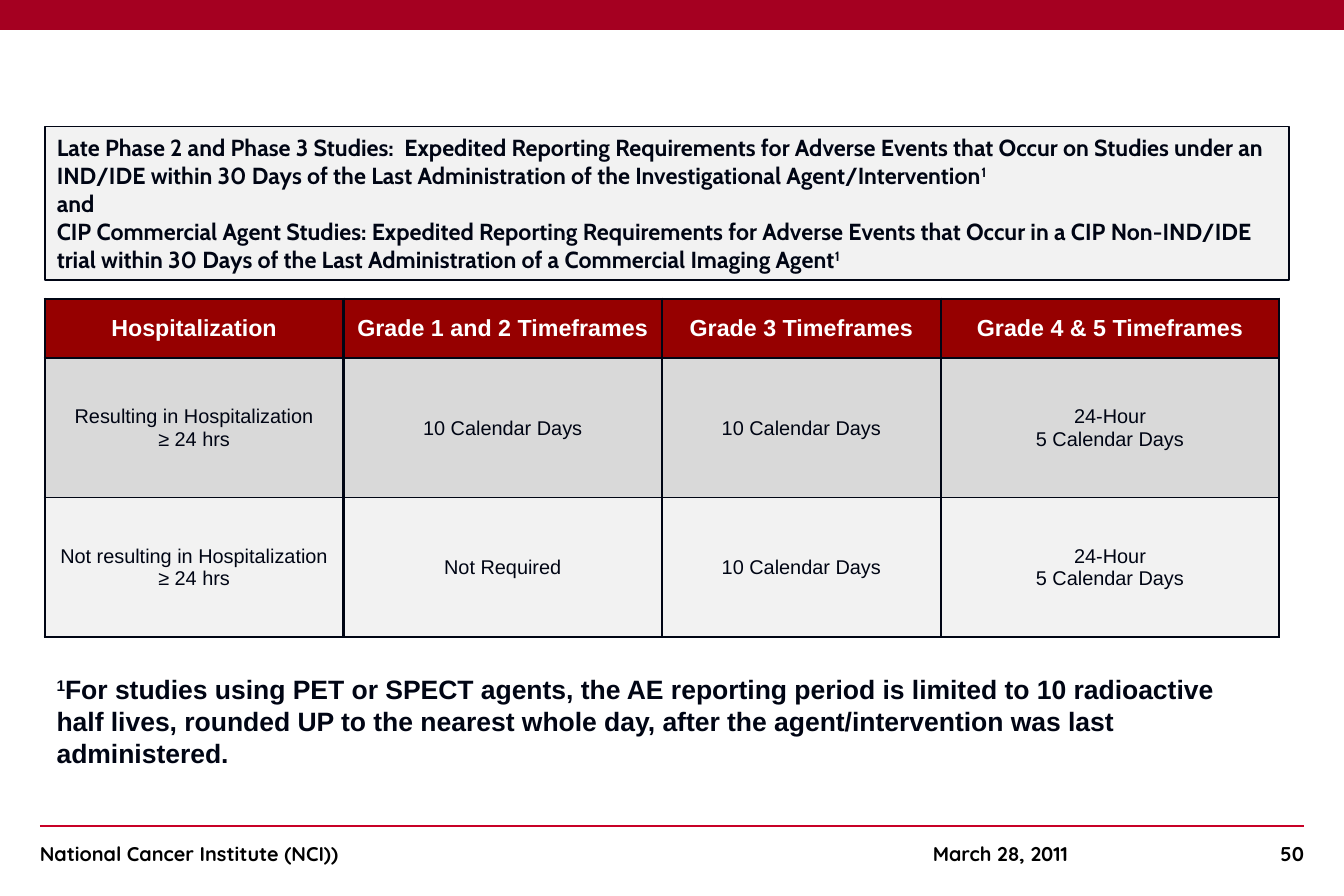
from dataclasses import dataclass

import pptx
import pptx.dml.color
import pptx.enum.shapes
import pptx.enum.text
import pptx.oxml
import pptx.oxml.ns
import pptx.util

ALIGN = pptx.enum.text.PP_ALIGN
ANCHOR = pptx.enum.text.MSO_ANCHOR
WIDTH, HEIGHT = 11.25, 7.5
COLS, ROWS = 135, 90


@dataclass(frozen=True)
class Theme:
    ink: str = "000514"
    black: str = "000000"
    white: str = "FFFFFF"
    band: str = "A50021"
    rule: str = "C80026"
    head: str = "960000"
    dark: str = "D9D9D9"
    light: str = "F2F2F2"
    body: str = "Arial"
    title: str = "Cabin"
    foot: str = "Quicksand"
    small: int = 12
    mid: int = 14
    large: int = 16
    thin: float = 1
    thick: float = 1.5


@dataclass(frozen=True)
class Box:
    """A place on the slide, in grid columns and rows."""
    left: float
    top: float
    wide: float
    high: float

    def place(self) -> tuple:
        return across(self.left), down(self.top), across(self.wide), down(self.high)


@dataclass(frozen=True)
class Label:
    text: str
    box: Box
    size: int
    font: str
    color: str
    align: ALIGN = ALIGN.LEFT
    pad: float = 0.1


@dataclass(frozen=True)
class Band:
    """One table row with its look."""
    cells: tuple
    high: float
    fill: str
    color: str
    size: int
    bold: bool
    above: float
    below: float


THEME = Theme()
SPANS = (30, 32, 28, 34)
BANDS = (
    Band(("Hospitalization", "Grade 1 and 2 Timeframes", "Grade 3 Timeframes",
          "Grade 4 & 5 Timeframes"),
         6, THEME.head, THEME.white, THEME.mid, True, THEME.thick, THEME.thick),
    Band(("Resulting in Hospitalization\n≥ 24 hrs", "10 Calendar Days",
          "10 Calendar Days", "24-Hour\n5 Calendar Days"),
         14, THEME.dark, THEME.ink, THEME.small, False, THEME.thick, THEME.thin),
    Band(("Not resulting in Hospitalization\n≥ 24 hrs", "Not Required",
          "10 Calendar Days", "24-Hour\n5 Calendar Days"),
         14, THEME.light, THEME.ink, THEME.small, False, THEME.thin, THEME.thick),
)
# Text between a pair of carets is raised.
TITLE = (
    "Late Phase 2 and Phase 3 Studies:  Expedited Reporting Requirements for Adverse "
    "Events that Occur on Studies under an IND/IDE within 30 Days of the Last "
    "Administration of the Investigational Agent/Intervention^1^\n"
    "and\n"
    "CIP Commercial Agent Studies: Expedited Reporting Requirements for Adverse Events "
    "that Occur in a CIP Non-IND/IDE trial within 30 Days of the Last Administration "
    "of a Commercial Imaging Agent^1^"
)
NOTE = (
    "^1^For studies using PET or SPECT agents, the AE reporting period is limited to "
    "10 radioactive half lives, rounded UP to the nearest whole day, after the "
    "agent/intervention was last administered."
)
LABELS = (
    Label(NOTE, Box(4.5, 67, 123, 11), THEME.large, THEME.body, THEME.ink),
    Label("National Cancer Institute (NCI))", Box(4, 84, 60, 3.6),
          THEME.small, THEME.foot, THEME.black, pad=0),
    Label("March 28, 2011", Box(93.7, 84, 16, 3.6),
          THEME.small, THEME.foot, THEME.black, pad=0),
    Label("50", Box(111, 84, 20, 3.6),
          THEME.small, THEME.foot, THEME.black, ALIGN.RIGHT, 0),
)


def across(cols: float) -> int:
    return pptx.util.Inches(WIDTH * cols / COLS)


def down(rows: float) -> int:
    return pptx.util.Inches(HEIGHT * rows / ROWS)


def rgb(code: str) -> pptx.dml.color.RGBColor:
    return pptx.dml.color.RGBColor.from_string(code)


def paint(fill, code: str) -> None:
    fill.solid()
    fill.fore_color.rgb = rgb(code)


def write(frame, text: str, *, size: int, font: str, color: str,
          bold: bool = True, align: ALIGN = ALIGN.LEFT) -> None:
    frame.word_wrap = True
    for row, line in enumerate(text.split("\n")):
        para = frame.add_paragraph() if row else frame.paragraphs[0]
        para.alignment = align
        for part, piece in enumerate(line.split("^")):
            if not piece:
                continue
            run = para.add_run()
            run.text = piece
            run.font.size = pptx.util.Pt(size)
            run.font.name = font
            run.font.bold = bold
            run.font.color.rgb = rgb(color)
            if part % 2:
                run.font._element.set("baseline", "30000")


def draw_band(slide) -> None:
    bar = slide.shapes.add_shape(pptx.enum.shapes.MSO_SHAPE.RECTANGLE,
                                 *Box(0, 0, COLS, 3).place())
    bar.shadow.inherit = False
    paint(bar.fill, THEME.band)
    bar.line.fill.background()


def draw_title(slide) -> None:
    title = slide.shapes.title
    title.left, title.top, title.width, title.height = Box(4.5, 12.7, 125, 15.4).place()
    paint(title.fill, THEME.light)
    paint(title.line.fill, THEME.ink)
    title.line.width = pptx.util.Pt(THEME.thin)
    frame = title.text_frame
    frame.auto_size = pptx.enum.text.MSO_AUTO_SIZE.NONE
    frame.vertical_anchor = ANCHOR.MIDDLE
    write(frame, TITLE, size=THEME.mid, font=THEME.title, color=THEME.ink)


def edge(cell, side: str, width: float) -> None:
    cell._tc.get_or_add_tcPr().append(pptx.oxml.parse_xml(
        f'<a:{side} {pptx.oxml.ns.nsdecls("a")} w="{pptx.util.Pt(width)}">'
        f'<a:solidFill><a:srgbClr val="{THEME.ink}"/></a:solidFill></a:{side}>'))


def draw_table(slide) -> None:
    box = Box(4.5, 30, sum(SPANS), sum(band.high for band in BANDS))
    table = slide.shapes.add_table(len(BANDS), len(SPANS), *box.place()).table
    table.first_row = table.horz_banding = False
    for col, span in zip(table.columns, SPANS):
        col.width = across(span)
    for row, band in zip(table.rows, BANDS):
        row.height = down(band.high)
        for cell, text in zip(row.cells, band.cells):
            for side, width in (("lnL", THEME.thick), ("lnR", THEME.thick),
                                ("lnT", band.above), ("lnB", band.below)):
                edge(cell, side, width)
            paint(cell.fill, band.fill)
            cell.vertical_anchor = ANCHOR.MIDDLE
            write(cell.text_frame, text, size=band.size, font=THEME.body,
                  color=band.color, bold=band.bold, align=ALIGN.CENTER)


def draw_label(slide, label: Label) -> None:
    frame = slide.shapes.add_textbox(*label.box.place()).text_frame
    frame.margin_left = frame.margin_right = pptx.util.Inches(label.pad)
    write(frame, label.text, size=label.size, font=label.font,
          color=label.color, align=label.align)


def draw_rule(slide) -> None:
    rule = slide.shapes.add_connector(pptx.enum.shapes.MSO_CONNECTOR.STRAIGHT,
                                      across(4), down(83), across(131), down(83))
    rule.line.color.rgb = rgb(THEME.rule)
    rule.line.width = pptx.util.Pt(THEME.thin)
    rule._element.spPr.append(
        pptx.oxml.parse_xml(f'<a:effectLst {pptx.oxml.ns.nsdecls("a")}/>'))


def main() -> None:
    deck = pptx.Presentation()
    deck.slide_width, deck.slide_height = across(COLS), down(ROWS)
    slide = deck.slides.add_slide(deck.slide_layouts.get_by_name("Title Only"))
    draw_band(slide)
    draw_rule(slide)
    draw_title(slide)
    draw_table(slide)
    for label in LABELS:
        draw_label(slide, label)
    deck.save("out.pptx")


if __name__ == "__main__":
    main()
